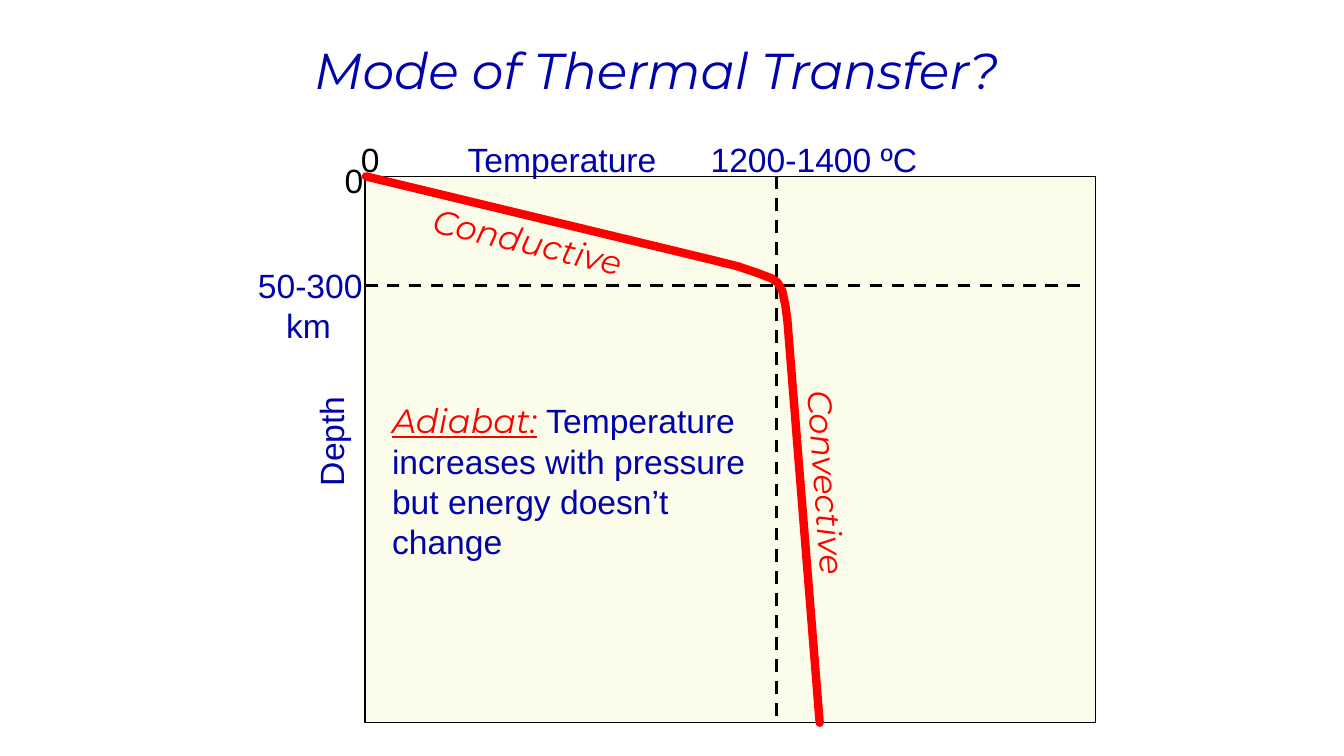
import pptx
import pptx.util
import pptx.dml.color
import pptx.enum.dml
import pptx.enum.shapes
import pptx.enum.text
import pptx.oxml

Inches = pptx.util.Inches
Pt = pptx.util.Pt
RGBColor = pptx.dml.color.RGBColor

BLUE = RGBColor(0x00, 0x03, 0xAA)
RED = RGBColor(0xFF, 0x00, 0x00)
BLACK = RGBColor(0x00, 0x00, 0x00)
CREAM = RGBColor(0xFC, 0xFC, 0xEA)
SANS = "Arial"
SLANT = "Montserrat"


def add_run(para, text, color, font=SANS, size=24, under=False):
    run = para.add_run()
    run.text = text
    run.font.name = font
    run.font.size = Pt(size)
    run.font.italic = font == SLANT
    run.font.underline = under
    run.font.color.rgb = color


def add_label(slide, box, lines, turn=0):
    shape = slide.shapes.add_textbox(*map(Inches, box))
    shape.rotation = turn
    frame = shape.text_frame
    frame.word_wrap = False
    frame.auto_size = pptx.enum.text.MSO_AUTO_SIZE.SHAPE_TO_FIT_TEXT
    for index, runs in enumerate(lines):
        para = frame.add_paragraph() if index else frame.paragraphs[0]
        for run in runs:
            add_run(para, *run)
    return frame


def add_dash(slide, x1, y1, x2, y2):
    line = slide.shapes.add_connector(
        pptx.enum.shapes.MSO_CONNECTOR.STRAIGHT, *map(Inches, (x1, y1, x2, y2)))
    line.line.color.rgb = BLACK
    line.line.width = Pt(2.25)
    line.line.dash_style = pptx.enum.dml.MSO_LINE.DASH
    props = line._element.spPr
    props.append(props.makeelement(pptx.oxml.ns.qn("a:effectLst"), {}))


def add_curve(slide, left, top):
    points = [(0.01, 0), (3.45, 0.83), (3.69, 0.89), (3.87, 0.95),
              (4.03, 1.01), (4.09, 1.05), (4.12, 1.1), (4.14, 1.14),
              (4.17, 1.28), (4.19, 1.43), (4.51, 5.42)]
    spots = [(Inches(left + x), Inches(top + y)) for x, y in points]
    path = slide.shapes.build_freeform(*spots[0])
    path.add_line_segments(spots[1:], close=False)
    curve = path.convert_to_shape()
    curve.shadow.inherit = False
    curve.fill.background()
    curve.line.color.rgb = RED
    curve.line.width = Pt(6)
    stroke = curve.line._get_or_add_ln()
    stroke.set("cap", "rnd")
    stroke.append(stroke.makeelement(pptx.oxml.ns.qn("a:round"), {}))


def add_title(slide, box):
    add_label(slide, box, [[("Mode of Thermal Transfer?", BLUE, SLANT, 36)]])


def add_axes(slide, box):
    left, top, width, height = box
    labels = [
        ("Depth", BLUE, -0.89, 2.37, 1.1, 270),
        ("Temperature", BLUE, 0.92, -0.42, 2.11, 0),
        ("0", BLACK, -0.3, -0.21, 0.39, 0),
        ("0", BLACK, -0.14, -0.42, 0.39, 0),
        ("1200-1400 ºC", BLUE, 3.33, -0.42, 2.27, 0),
    ]
    for text, color, x, y, wide, turn in labels:
        add_label(slide, (left + x, top + y, wide, 0.5), [[(text, color)]], turn)
    frame = add_label(slide, (left - 1.16, top + 0.83, 1.25, 0.91),
                      [[("50-300", BLUE)], [("km", BLUE)]])
    frame.paragraphs[1]._p.get_or_add_pPr().set("marL", str(Inches(0.28)))


def add_plot(slide, box):
    left, top, width, height = box
    panel = slide.shapes.add_shape(
        pptx.enum.shapes.MSO_SHAPE.RECTANGLE, *map(Inches, box))
    panel.shadow.inherit = False
    panel.fill.solid()
    panel.fill.fore_color.rgb = CREAM
    panel.line.color.rgb = BLACK
    panel.line.width = Pt(0.75)
    add_axes(slide, box)
    add_dash(slide, left + 4.08, top, left + 4.08, top + height)
    add_dash(slide, left, top + 1.08, left + width - 0.08, top + 1.08)
    add_label(slide, (left + 0.56, top + 0.41, 2.26, 0.5),
              [[("Conductive", RED, SLANT)]], 12.9)
    add_label(slide, (left + 3.47, top + 2.89, 2.24, 0.5),
              [[("Convective", RED, SLANT)]], 85.9)
    add_label(slide, (left + 0.17, top + 2.17, 3.74, 1.72), [
        [("Adiabat:", RED, SLANT, 24, True), (" ", RED), ("Temperature", BLUE)],
        [("increases with pressure", BLUE)],
        [("but energy doesn’t", BLUE)],
        [("change", BLUE)],
    ])
    add_curve(slide, left, top)


def main():
    deck = pptx.Presentation()
    deck.slide_width = Inches(13.33)
    deck.slide_height = Inches(7.5)
    slide = deck.slides.add_slide(deck.slide_layouts[6])
    add_title(slide, (3.02, 0.34, 7.68, 0.71))
    add_plot(slide, (3.62, 1.75, 7.25, 5.42))
    deck.save("out.pptx")


if __name__ == "__main__":
    main()
